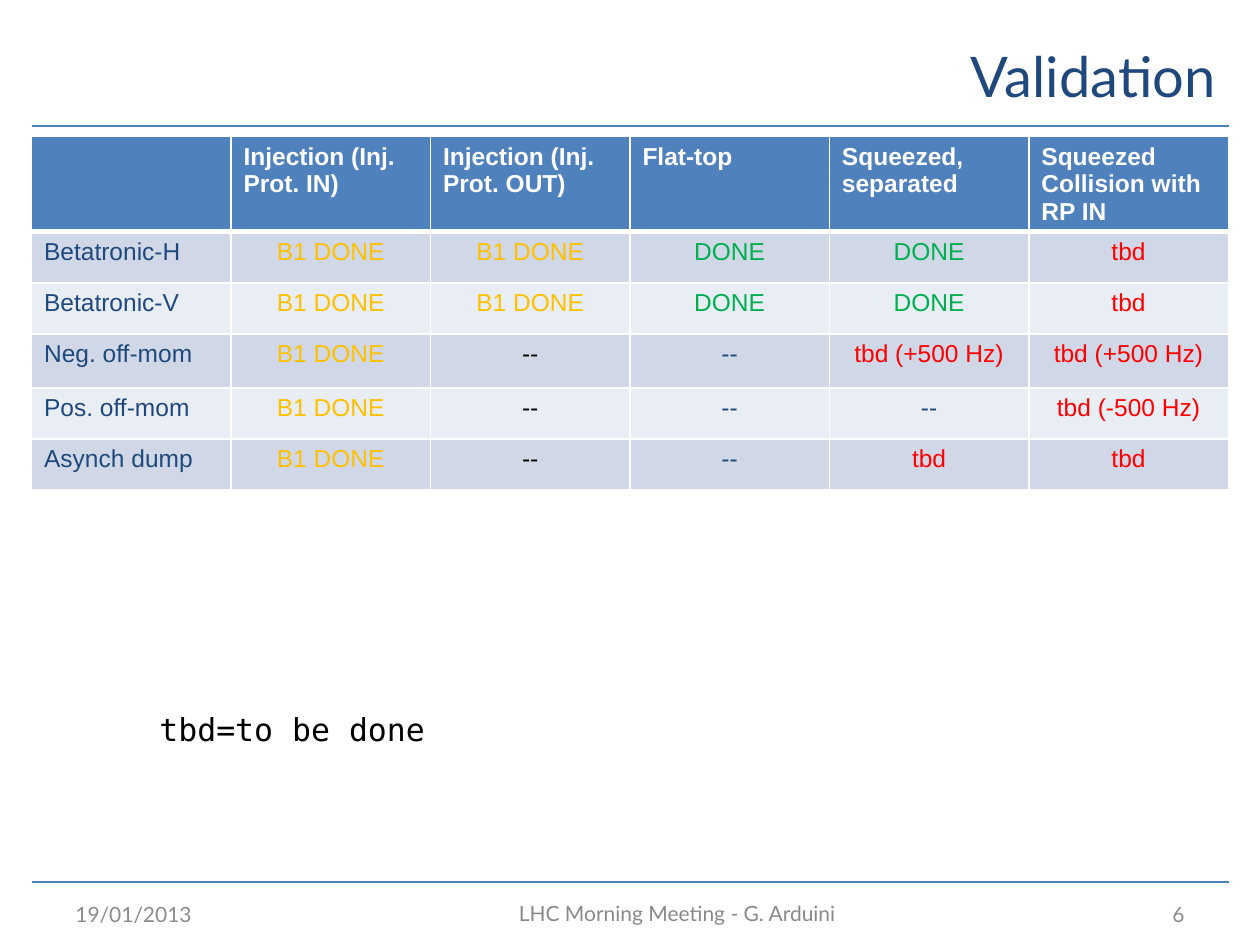
from dataclasses import dataclass

from lxml.etree import SubElement
from pptx import Presentation
from pptx.dml.color import RGBColor
from pptx.enum.shapes import MSO_CONNECTOR as Connector
from pptx.enum.text import MSO_ANCHOR as Anchor, MSO_AUTO_SIZE as AutoSize, PP_ALIGN as Align
from pptx.oxml.ns import qn
from pptx.util import Inches, Pt

COLORS = {
    "navy": "1F497D", "rule": "4B7EBC", "header": "4F81BD",
    "band": "D0D8E8", "pale": "E9EDF4", "white": "FFFFFF",
    "black": "000000", "amber": "FFC000", "green": "00B050",
    "red": "FF0000", "grey": "8C8C8C", "footer": "898989",
}
COLUMNS, ROWS = 120, 90
WIDTH, HEIGHT = Inches(10), Inches(7.5)


@dataclass
class Area:
    col: float
    row: float
    cols: float
    rows: float

    def box(self) -> tuple[int, int, int, int]:
        return (across(self.col), down(self.row), across(self.cols), down(self.rows))


@dataclass
class Style:
    font: str
    size: int
    color: str
    align: Align = Align.LEFT
    bold: bool = False


@dataclass
class Note:
    text: str
    area: Area
    style: Style
    anchor: Anchor = Anchor.MIDDLE
    fit: AutoSize = AutoSize.NONE


def across(cols: float) -> int:
    return round(WIDTH * cols / COLUMNS)


def down(rows: float) -> int:
    return round(HEIGHT * rows / ROWS)


def rgb(name: str) -> RGBColor:
    return RGBColor.from_string(COLORS[name])


def write(frame, text: str, style: Style) -> None:
    paragraph = frame.paragraphs[0]
    paragraph.alignment = style.align
    run = paragraph.add_run()
    run.text = text
    formats = {"name": style.font, "size": Pt(style.size), "bold": style.bold}
    for attribute, value in formats.items():
        setattr(run.font, attribute, value)
    run.font.color.rgb = rgb(style.color)


def draw_rule(slide, row: float) -> None:
    rule = slide.shapes.add_connector(
        Connector.STRAIGHT, across(3), down(row), across(117), down(row))
    rule.line.color.rgb = rgb("rule")
    rule.line.width = Pt(1.5)
    SubElement(rule._element.spPr, qn("a:effectLst"))


def draw_note(slide, note: Note) -> None:
    frame = slide.shapes.add_textbox(*note.area.box()).text_frame
    formats = {"word_wrap": True, "auto_size": note.fit, "vertical_anchor": note.anchor}
    for attribute, value in formats.items():
        setattr(frame, attribute, value)
    write(frame, note.text, note.style)


def draw_borders(cell, widths: dict[str, float]) -> None:
    properties = cell._tc.get_or_add_tcPr()
    for side, width in widths.items():
        border = SubElement(properties, qn(f"a:ln{side}"), w=str(Pt(width)))
        fill = SubElement(border, qn("a:solidFill"))
        SubElement(fill, qn("a:srgbClr"), val=COLORS["white"])


def status_color(text: str, column: int) -> str:
    if column == 0:
        return "navy"
    if text == "--":
        return "black" if column == 2 else "navy"
    if text.startswith("tbd"):
        return "red"
    return "amber" if text.startswith("B1") else "green"


def cell_style(text: str, row: int, column: int) -> Style:
    if row == 0:
        return Style("Arial", 14, "white", bold=True)
    align = Align.CENTER if column else Align.LEFT
    return Style("Arial", 14, status_color(text, column), align)


def draw_table(slide, area: Area, records: list[list[str]], heights: list[float]) -> None:
    table = slide.shapes.add_table(len(records), len(records[0]), *area.box()).table
    for column in table.columns:
        column.width = across(area.cols / len(records[0]))
    for r, record in enumerate(records):
        table.rows[r].height = down(heights[r])
        fill = "header" if r == 0 else ("band" if r % 2 else "pale")
        for c, text in enumerate(record):
            cell = table.cell(r, c)
            draw_borders(cell, {"L": 1, "R": 1, "T": 3 if r == 1 else 1, "B": 3 if r == 0 else 1})
            cell.fill.solid()
            cell.fill.fore_color.rgb = rgb(fill)
            if text:
                write(cell.text_frame, text, cell_style(text, r, c))


VALIDATION = [
    ["", "Injection (Inj. Prot. IN)", "Injection (Inj. Prot. OUT)", "Flat-top",
     "Squeezed, separated", "Squeezed Collision with RP IN"],
    ["Betatronic-H", "B1 DONE", "B1 DONE", "DONE", "DONE", "tbd"],
    ["Betatronic-V", "B1 DONE", "B1 DONE", "DONE", "DONE", "tbd"],
    ["Neg. off-mom", "B1 DONE", "--", "--", "tbd (+500 Hz)", "tbd (+500 Hz)"],
    ["Pos. off-mom", "B1 DONE", "--", "--", "--", "tbd (-500 Hz)"],
    ["Asynch dump", "B1 DONE", "--", "--", "tbd", "tbd"],
]
ROW_HEIGHTS = [9, 4.87, 4.87, 5.15, 4.87, 4.87]
NOTES = [
    Note("tbd=to be done", Area(14, 67, 58.5, 4.8),
         Style("DejaVu Sans Mono", 18, "black"), Anchor.TOP, AutoSize.SHAPE_TO_FIT_TEXT),
    Note("19/01/2013", Area(6, 86, 28, 2.1), Style("Lato", 12, "grey")),
    Note("LHC Morning Meeting - G. Arduini", Area(22, 86, 85, 2),
         Style("Lato", 12, "footer", Align.CENTER)),
    Note("6", Area(86, 86, 28, 2.1), Style("Lato", 12, "grey", Align.RIGHT)),
]


def main() -> None:
    deck = Presentation()
    deck.slide_width, deck.slide_height = WIDTH, HEIGHT
    slide = deck.slides.add_slide(deck.slide_layouts[5])
    for row in (12, 84):
        draw_rule(slide, row)
    title = slide.shapes.title
    title.left, title.top, title.width, title.height = Area(21, 2, 96, 10.4).box()
    title.text_frame.vertical_anchor = Anchor.MIDDLE
    write(title.text_frame, "Validation", Style("Lato", 32, "navy", Align.RIGHT))
    draw_table(slide, Area(3, 13, 114, sum(ROW_HEIGHTS)), VALIDATION, ROW_HEIGHTS)
    for note in NOTES:
        draw_note(slide, note)
    deck.save("out.pptx")


if __name__ == "__main__":
    main()
